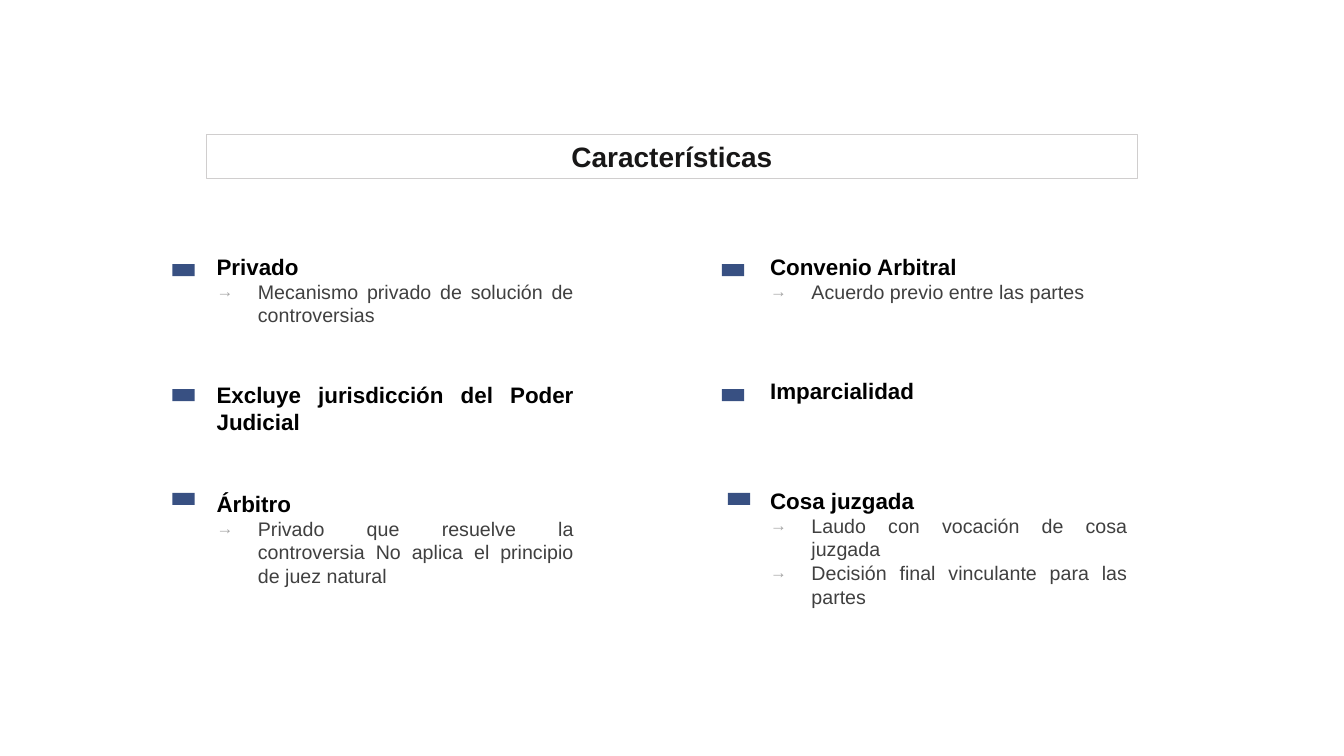
from dataclasses import dataclass

from lxml.etree import SubElement
from pptx import Presentation
from pptx.dml.color import RGBColor
from pptx.enum.shapes import MSO_SHAPE
from pptx.enum.text import MSO_ANCHOR, PP_ALIGN
from pptx.oxml.ns import qn
from pptx.util import Inches, Pt


@dataclass(frozen=True)
class Theme:
    font: str = "Arial"
    title_size: int = 20
    heading_size: int = 16
    detail_size: int = 14
    title: str = "181717"
    heading: str = "000000"
    detail: str = "404040"
    arrow: str = "A6A6A6"
    frame: str = "D0CECE"
    marker: str = "002060"
    marker_opacity: int = 78


THEME = Theme()

# Each topic: heading, details, points of space before the heading
PROCESS_TOPICS = [
    ("Privado", ["Mecanismo privado de solución de controversias"], 0),
    ("Excluye jurisdicción del Poder Judicial", [], 39),
    ("Árbitro", ["Privado que resuelve la controversia "
                 "No aplica el principio de juez natural"], 39),
]
AWARD_TOPICS = [
    ("Convenio Arbitral", ["Acuerdo previo entre las partes"], 0),
    ("Imparcialidad", [], 53),
    ("Cosa juzgada", ["Laudo con vocación de cosa juzgada",
                      "Decisión final vinculante para las partes"], 59),
]
MARKER_TOPS = [2.62, 3.86, 4.89]


def style_text(para, size, color, bold=False):
    for span in para.runs:
        span.font.name = THEME.font
        span.font.size = Pt(size)
        span.font.bold = bold
        span.font.color.rgb = RGBColor.from_string(color)


def add_title(page, text):
    box = page.shapes.add_shape(MSO_SHAPE.RECTANGLE, Inches(2.05), Inches(1.33),
                                Inches(9.23), Inches(0.44))
    box.shadow.inherit = False
    box.fill.background()
    box.line.color.rgb = RGBColor.from_string(THEME.frame)
    box.line.width = Pt(0.75)
    box.text_frame.text = text
    box.text_frame.vertical_anchor = MSO_ANCHOR.MIDDLE
    para = box.text_frame.paragraphs[0]
    para.alignment = PP_ALIGN.CENTER
    style_text(para, THEME.title_size, THEME.title, bold=True)


def set_arrow_bullet(para):
    properties = para._p.get_or_add_pPr()
    properties.set("marL", str(Inches(0.41)))
    properties.set("indent", str(-Inches(0.41)))
    color = SubElement(properties, qn("a:buClr"))
    SubElement(color, qn("a:srgbClr"), val=THEME.arrow)
    SubElement(properties, qn("a:buSzPct"), val="86000")
    SubElement(properties, qn("a:buFont"), typeface=THEME.font)
    SubElement(properties, qn("a:buChar"), char="→")


def add_topics(page, left, height, topics):
    box = page.shapes.add_textbox(Inches(left), Inches(2.46),
                                  Inches(3.74), Inches(height))
    frame = box.text_frame
    frame.word_wrap = True
    for index, (heading, details, space_before) in enumerate(topics):
        para = frame.add_paragraph() if index else frame.paragraphs[0]
        para.text = heading
        para.alignment = PP_ALIGN.JUSTIFY
        if space_before:
            para.space_before = Pt(space_before)
        style_text(para, THEME.heading_size, THEME.heading, bold=True)
        for detail in details:
            para = frame.add_paragraph()
            para.text = detail
            para.alignment = PP_ALIGN.JUSTIFY
            set_arrow_bullet(para)
            style_text(para, THEME.detail_size, THEME.detail)


def add_marker(page, left, top):
    marker = page.shapes.add_shape(MSO_SHAPE.RECTANGLE, Inches(left), Inches(top),
                                   Inches(0.22), Inches(0.12))
    marker.shadow.inherit = False
    marker.line.fill.background()
    marker.fill.solid()
    marker.fill.fore_color.rgb = RGBColor.from_string(THEME.marker)
    color = marker._element.spPr.find(qn("a:solidFill")).find(qn("a:srgbClr"))
    SubElement(color, qn("a:alpha"), val=str(THEME.marker_opacity * 1000))


def main():
    deck = Presentation()
    deck.slide_width, deck.slide_height = Inches(13.33), Inches(7.5)
    page = deck.slides.add_slide(deck.slide_layouts[6])
    add_title(page, "Características")
    add_topics(page, 2.05, 4.27, PROCESS_TOPICS)
    add_topics(page, 7.54, 4.17, AWARD_TOPICS)
    for lefts in ([1.71, 1.71, 1.71], [7.16, 7.16, 7.22]):
        for left, top in zip(lefts, MARKER_TOPS):
            add_marker(page, left, top)
    deck.save("out.pptx")


if __name__ == "__main__":
    main()
